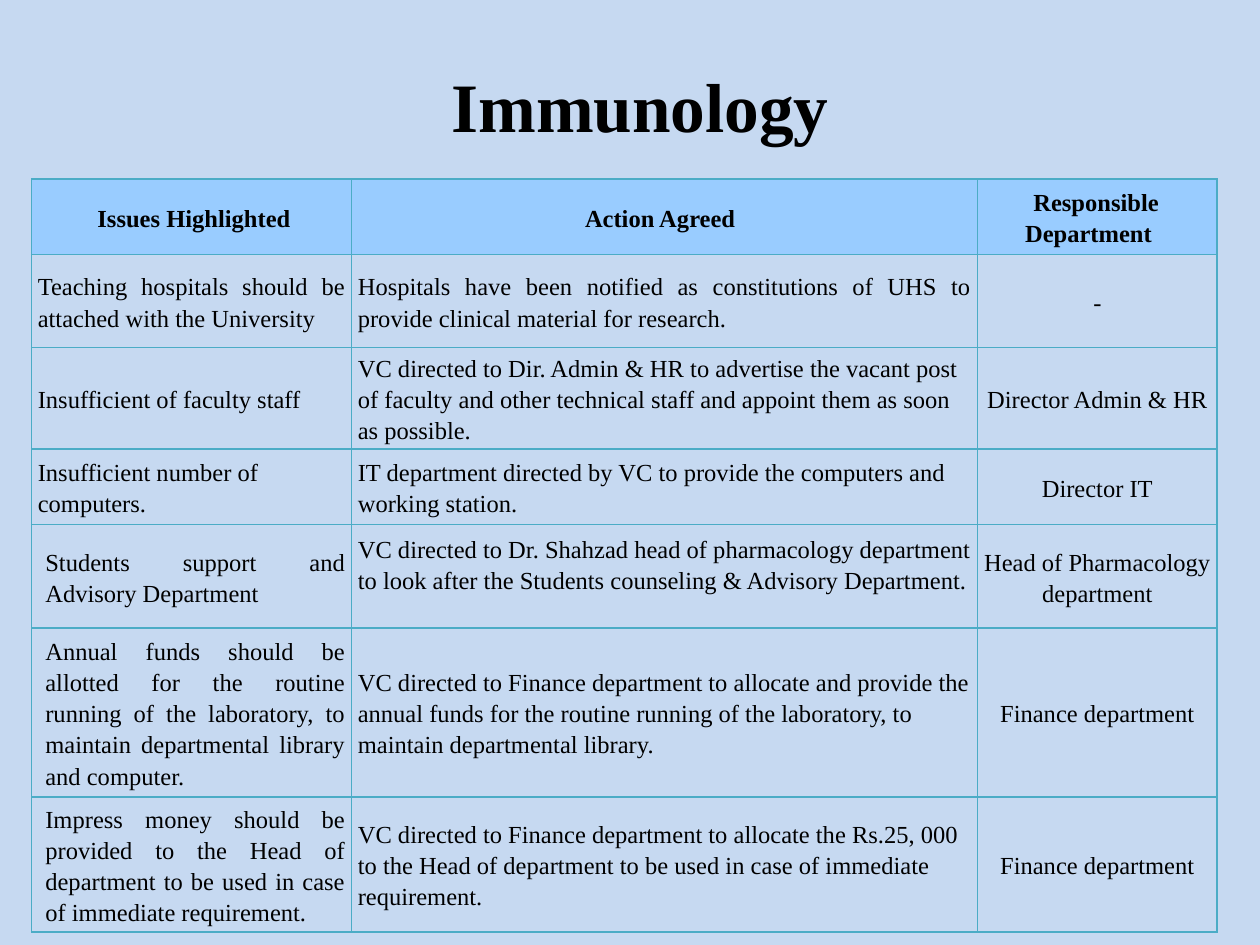
from lxml import etree
from pptx import Presentation
from pptx.dml.color import RGBColor
from pptx.enum.text import MSO_ANCHOR as Anchor, PP_ALIGN as Align
from pptx.oxml.ns import qn
from pptx.util import Inches, Pt

FONT = "Times New Roman"
INK, PAPER, HEAD, EDGE = "000000", "C6D9F1", "99CCFF", "4BACC6"
COLS = [2.54, 4.97, 1.9]
ROWS = [0.6, 0.74, 0.79, 0.6, 0.82, 1.32, 1.05]

# Each header line: text, left indent, right indent
HEADS = [
    [("Issues Highlighted", 0.42, 0.38)],
    [("Action Agreed", 0.32, 0.39)],
    [("Responsible", 0.27, 0.29), ("Department", 0.2, 0.34)],
]
ISSUES = [
    ("Teaching hospitals should be attached with the University",
     "Hospitals have been notified as constitutions of UHS to provide "
     "clinical material for research.",
     "-"),
    ("Insufficient of faculty staff",
     "VC directed to Dir. Admin & HR to advertise the vacant post of faculty "
     "and other technical staff and appoint them as soon as possible.",
     "Director Admin & HR"),
    ("Insufficient number of computers.",
     "IT department directed by VC to provide the computers and working station.",
     "Director IT"),
    ("Students support and Advisory Department",
     "VC directed to Dr. Shahzad head of pharmacology department to look after "
     "the Students counseling & Advisory Department.",
     "Head of Pharmacology department"),
    ("Annual funds should be allotted for the routine running of the "
     "laboratory, to maintain departmental library and computer.",
     "VC directed to Finance department to allocate and provide the annual "
     "funds for the routine running of the laboratory, to maintain "
     "departmental library.",
     "Finance department"),
    ("Impress money should be provided to the Head of department to be used "
     "in case of immediate requirement.",
     "VC directed to Finance department to allocate the Rs.25, 000 to the Head "
     "of department to be used in case of immediate requirement.",
     "Finance department"),
]
JUST = {(1, 0), (1, 1), (4, 0), (5, 0), (6, 0)}
RAISED = (4, 1)


def color(code):
    return RGBColor.from_string(code)


def write(para, text, size, align, bold=False):
    para.text = text
    para.alignment = align
    font = para.font
    font.name, font.size, font.bold = FONT, Pt(size), bold
    font.color.rgb = color(INK)


def indent(para, left, right=0):
    props = para._p.get_or_add_pPr()
    props.set("marL", str(Inches(left)))
    props.set("marR", str(Inches(right)))


def edge(cell):
    """Draw a thin line on all four sides; call before the cell is filled."""
    props = cell._tc.get_or_add_tcPr()
    for side in ("a:lnL", "a:lnR", "a:lnT", "a:lnB"):
        line = etree.SubElement(props, qn(side), w=str(Pt(1)))
        fill = etree.SubElement(line, qn("a:solidFill"))
        etree.SubElement(fill, qn("a:srgbClr"), val=EDGE)


def style(cell, fill):
    edge(cell)
    if fill:
        cell.fill.solid()
        cell.fill.fore_color.rgb = color(fill)
    else:
        cell.fill.background()
    cell.vertical_anchor = Anchor.MIDDLE
    cell.margin_left = cell.margin_right = Inches(0.05)
    cell.margin_top = cell.margin_bottom = 0


def add_title(slide, box, text):
    frame = slide.shapes.add_textbox(*map(Inches, box)).text_frame
    frame.word_wrap = True
    frame.vertical_anchor = Anchor.MIDDLE
    write(frame.paragraphs[0], text, 39.6, Align.CENTER, True)


def fill_head(cell, lines):
    style(cell, HEAD)
    frame = cell.text_frame
    for i, (text, left, right) in enumerate(lines):
        para = frame.add_paragraph() if i else frame.paragraphs[0]
        indent(para, left, right)
        write(para, text, 14, Align.CENTER, True)
        para.line_spacing = 1.15


def fill_body(cell, text, row, col):
    style(cell, None)
    para = cell.text_frame.paragraphs[0]
    if col == 0 and row >= 4:
        indent(para, 0.06)
    if col == 2:
        align = Align.CENTER
    else:
        align = Align.JUSTIFY if (row, col) in JUST else Align.LEFT
    write(para, text, 14, align)
    para.line_spacing = 1.15
    if (row, col) == RAISED:
        cell.margin_bottom = Inches(0.2)


def add_issues(slide, box):
    frame = slide.shapes.add_table(len(ROWS), len(COLS), *map(Inches, box))
    table = frame.table
    table.horz_banding = table.first_row = False
    for col, width in zip(table.columns, COLS):
        col.width = Inches(width)
    for row, height in zip(table.rows, ROWS):
        row.height = Inches(height)
    for c, lines in enumerate(HEADS):
        fill_head(table.cell(0, c), lines)
    for r, texts in enumerate(ISSUES, 1):
        for c, text in enumerate(texts):
            fill_body(table.cell(r, c), text, r, c)


def main():
    deck = Presentation()
    deck.slide_width, deck.slide_height = Inches(10), Inches(7.5)
    slide = deck.slides.add_slide(deck.slide_layouts[6])
    back = slide.background.fill
    back.solid()
    back.fore_color.rgb = color(PAPER)
    add_title(slide, (0.33, 0.5, 9.5, 0.67), "Immunology")
    add_issues(slide, (0.25, 1.42, sum(COLS), sum(ROWS)))
    deck.save("out.pptx")


if __name__ == "__main__":
    main()
